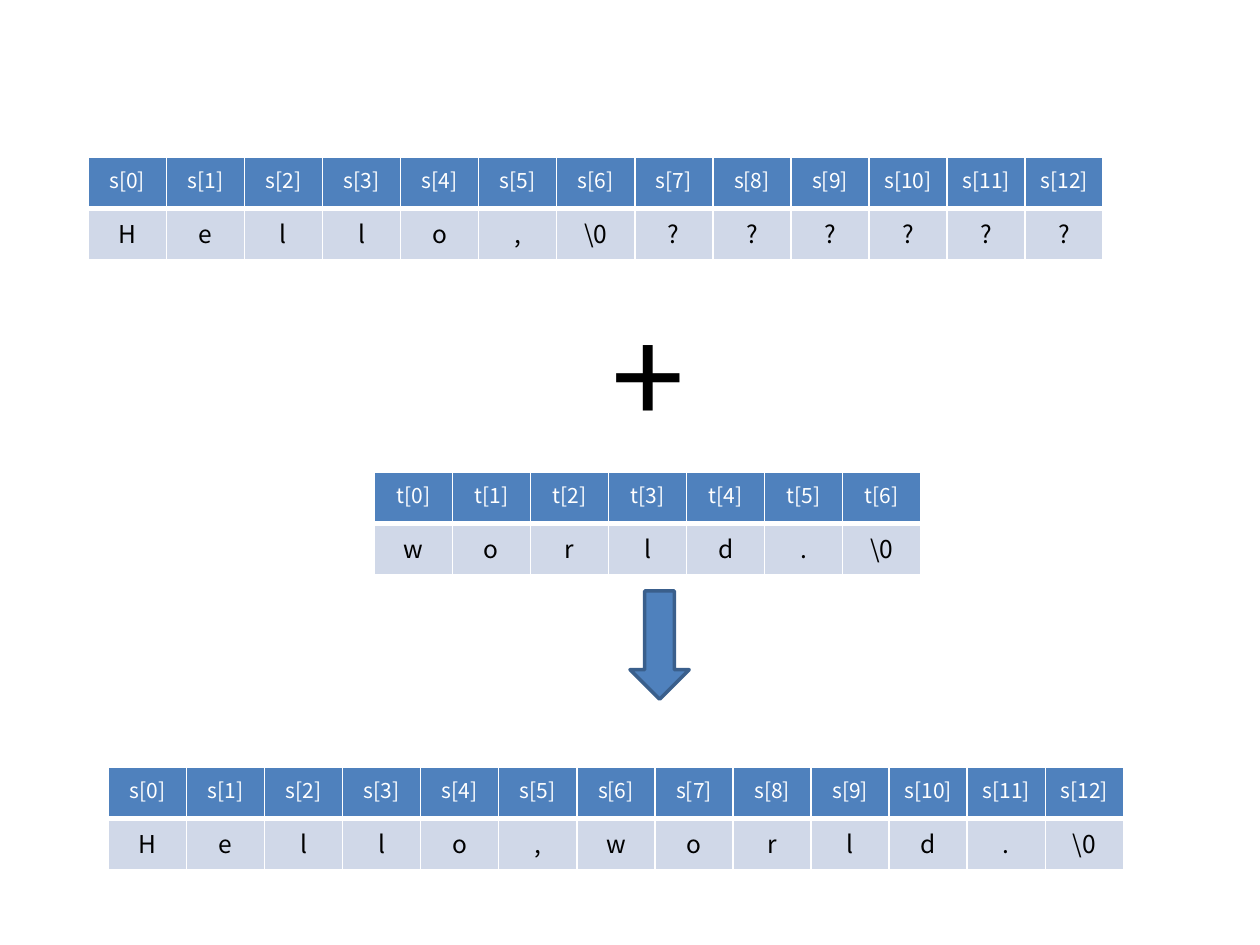
"""Build a slide showing how string t is appended to string s, one character per cell."""
from dataclasses import dataclass

from lxml.etree import SubElement
from pptx import Presentation
from pptx.dml.color import RGBColor
from pptx.enum.shapes import MSO_SHAPE
from pptx.enum.text import MSO_AUTO_SIZE, PP_ALIGN
from pptx.oxml.ns import qn
from pptx.util import Inches, Pt


@dataclass(frozen=True)
class Theme:
    blue: str = "4F81BD"
    outline: str = "3A5F8C"
    pale: str = "D0D8E8"
    white: str = "FFFFFF"
    black: str = "000000"
    cell_font: str = "Noto Sans CJK JP"
    sign_font: str = "Calibri"
    index_size: int = 12
    char_size: int = 14
    sign_size: int = 80


def add_run(p, text, font, size, color):
    r = p.add_run()
    r.text = text
    r.font.name = font
    r.font.size = Pt(size)
    r.font.color.rgb = RGBColor.from_string(color)


def add_borders(cell, bottom):
    tc_pr = cell._tc.get_or_add_tcPr()
    for side, width in (("L", 1), ("R", 1), ("T", 1), ("B", bottom)):
        ln = SubElement(tc_pr, qn(f"a:ln{side}"), w=str(Pt(width)))
        fill = SubElement(ln, qn("a:solidFill"))
        SubElement(fill, qn("a:srgbClr"), val=theme.white)


theme = Theme()
prs = Presentation()
prs.slide_width = Inches(10)
prs.slide_height = Inches(7.5)
s = prs.slides.add_slide(prs.slide_layouts[6])

hello = list("Hello,")
world = list("world.") + ["\\0"]
arrays = (
    ("s", hello + ["\\0"] + ["?"] * 6, 0.7, 1.25),
    ("t", world, 2.97, 3.75),
    ("s", hello + world, 0.86, 6.09),
)
for name, chars, left, top in arrays:
    frame = s.shapes.add_table(2, len(chars), Inches(left), Inches(top),
                               Inches(0.62 * len(chars)), Inches(0.81))
    table = frame.table
    for column in table.columns:
        column.width = Inches(0.62)
    indexes = [f"{name}[{i}]" for i in range(len(chars))]
    rows = (
        (indexes, theme.index_size, theme.white, theme.blue, 3),
        (chars, theme.char_size, theme.black, theme.pale, 1),
    )
    for row, (texts, size, color, fill, bottom) in enumerate(rows):
        for col, text in enumerate(texts):
            cell = table.cell(row, col)
            add_borders(cell, bottom)
            cell.fill.solid()
            cell.fill.fore_color.rgb = RGBColor.from_string(fill)
            p = cell.text_frame.paragraphs[0]
            p.alignment = PP_ALIGN.CENTER
            add_run(p, text, theme.cell_font, size, color)

plus = s.shapes.add_textbox(Inches(4.77), Inches(2.19), Inches(0.76), Inches(1.45))
tf = plus.text_frame
tf.word_wrap = False
tf.auto_size = MSO_AUTO_SIZE.SHAPE_TO_FIT_TEXT
add_run(tf.paragraphs[0], "+", theme.sign_font, theme.sign_size, theme.black)

arrow = s.shapes.add_shape(MSO_SHAPE.DOWN_ARROW, Inches(5), Inches(4.69),
                           Inches(0.47), Inches(0.86))
arrow.shadow.inherit = False
arrow.fill.solid()
arrow.fill.fore_color.rgb = RGBColor.from_string(theme.blue)
arrow.line.color.rgb = RGBColor.from_string(theme.outline)
arrow.line.width = Pt(2)

prs.save("out.pptx")
